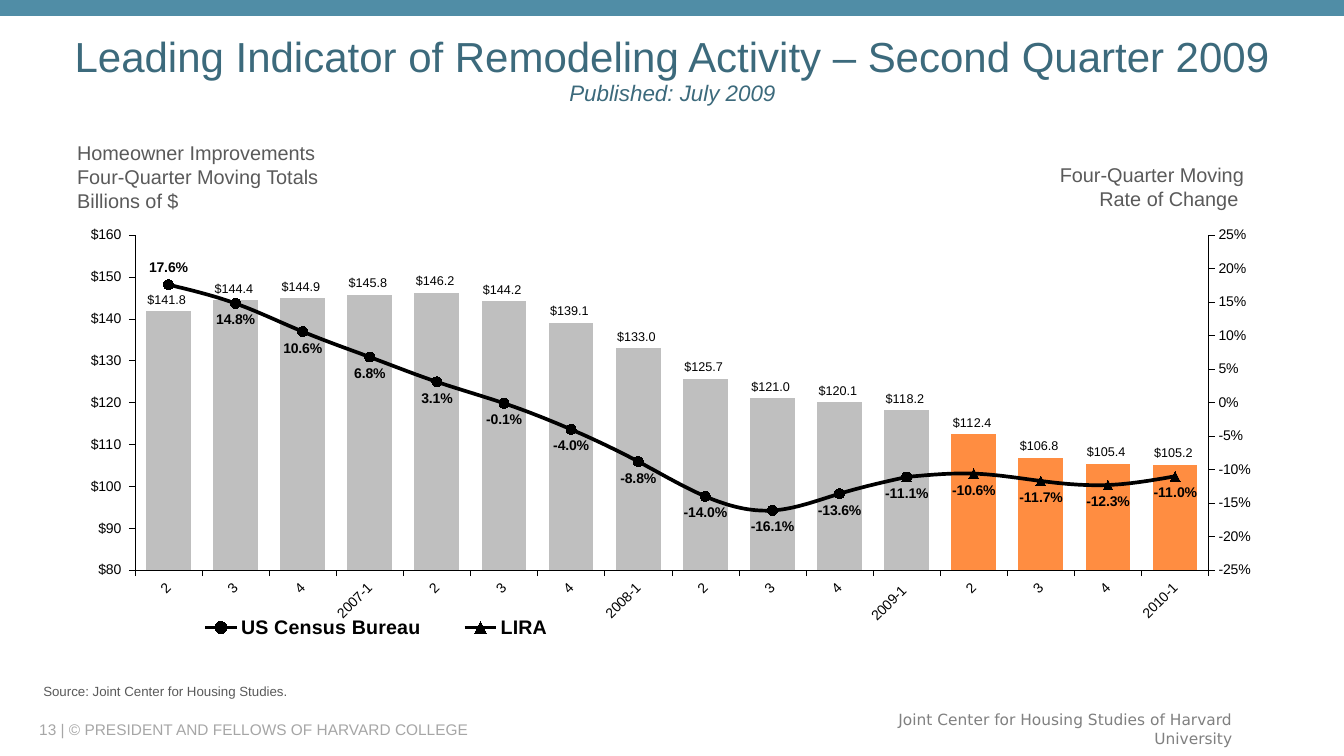
import copy

import lxml.etree
import pptx
import pptx.chart.axis
import pptx.chart.data
import pptx.dml.color
import pptx.enum.chart
import pptx.enum.shapes
import pptx.enum.text
import pptx.oxml
import pptx.oxml.ns
import pptx.util

WIDTH, HEIGHT = 13.33, 7.5
BLACK, TEAL, BAND, SLATE = "000000", "3C6A7C", "508DA6", "5A5A5A"
ACTUAL, PROJECTED = "BFBFBF", "FF8D41"

TITLE = "Leading Indicator of Remodeling Activity – Second Quarter 2009\vPublished: July 2009"
LEFT_HEADING = ["Homeowner Improvements", "Four-Quarter Moving Totals", "Billions of $"]
RIGHT_HEADING = ["Four-Quarter Moving", "Rate of Change "]
SOURCE = "Source: Joint Center for Housing Studies."
COPYRIGHT = "13 | © PRESIDENT AND FELLOWS OF HARVARD COLLEGE"
CENTER = "Joint Center for Housing Studies of Harvard University"

QUARTERS = ["2", "3", "4", "2007-1", "2", "3", "4", "2008-1",
            "2", "3", "4", "2009-1 ", "2", "3", "4", "2010-1"]
SPENDING = [141.8, 144.4, 144.9, 145.8, 146.2, 144.2, 139.1, 133.0,
            125.7, 121.0, 120.1, 118.2, 112.4, 106.8, 105.4, 105.2]
CENSUS = [0.176, 0.148, 0.106, 0.068, 0.031, -0.001, -0.04, -0.088,
          -0.14, -0.161, -0.136, -0.111]
LIRA = [-0.111, -0.106, -0.117, -0.123, -0.11]
FIRST_LIRA = len(QUARTERS) - len(LIRA)
DOLLARS, DOLLAR_LABELS = r"\$#,##0_);[Red]\(\$#,##0\)", r"\$#,##0.0_);[Red]\(\$#,##0.0\)"
PERCENT, PERCENT_LABELS = "0%", "0.0%"

PLOT_SHARES = {"x": 0.074, "y": 0.039, "w": 0.85, "h": 0.782}
LEGEND_SHARES = {"x": 0.1, "y": 0.92, "w": 0.33, "h": 0.07}


def color(value):
    return pptx.dml.color.RGBColor.from_string(value)


def place(left, top, width, height):
    """Turn percentages of the slide into lengths."""
    return [pptx.util.Inches(share * side / 100) for share, side in
            zip((left, top, width, height), (WIDTH, HEIGHT, WIDTH, HEIGHT))]


def style(font, size, tint=BLACK, bold=False, face="Arial"):
    font.size, font.name, font.bold = pptx.util.Pt(size), face, bold
    font.color.rgb = color(tint)


def write(slide, box, lines, size, tint, face="Arial", align="LEFT", anchor="TOP", spacing=None):
    frame = slide.shapes.add_textbox(*place(*box)).text_frame
    frame.word_wrap = True
    frame.vertical_anchor = pptx.enum.text.MSO_ANCHOR[anchor]
    for index, line in enumerate(lines):
        paragraph = frame.add_paragraph() if index else frame.paragraphs[0]
        paragraph.text = line
        paragraph.alignment = pptx.enum.text.PP_ALIGN[align]
        paragraph.line_spacing = spacing
        for run in paragraph.runs:
            style(run.font, size, tint, face=face)
    return frame


def element(tag, **attributes):
    made = pptx.oxml.parse_xml(f"<c:{tag} {pptx.oxml.ns.nsdecls('c')}/>")
    for key, value in attributes.items():
        made.set(key, value)
    return made


def layout(shares, inner=False):
    outer, manual = element("layout"), element("manualLayout")
    outer.append(manual)
    if inner:
        manual.append(element("layoutTarget", val="inner"))
    for side in "xy":
        manual.append(element(side + "Mode", val="edge"))
    for side, share in shares.items():
        manual.append(element(side, val=str(share)))
    return outer


def set_layout(parent, position, new_layout):
    for old in parent.xpath("c:layout"):
        parent.remove(old)
    parent.insert(position, new_layout)


def scale(axis, low, high, step, number_format):
    axis.minimum_scale, axis.maximum_scale, axis.major_unit = low, high, step
    axis.tick_labels.number_format = number_format
    axis.tick_labels.number_format_is_linked = False


def dress_axis(axis):
    axis.has_major_gridlines = False
    axis.major_tick_mark = pptx.enum.chart.XL_TICK_MARK.OUTSIDE
    axis.minor_tick_mark = pptx.enum.chart.XL_TICK_MARK.NONE
    axis.format.line.color.rgb = color(BLACK)
    axis.format.line.width = pptx.util.Pt(0.33)
    style(axis.tick_labels.font, 10)


def label(series, position, number_format, size, bold):
    labels = series.data_labels
    labels.show_value = True
    labels.position = pptx.enum.chart.XL_LABEL_POSITION[position]
    labels.number_format = number_format
    labels.number_format_is_linked = False
    style(labels.font, size, bold=bold)


def move_rates_to_right_axis(chart):
    """Turn the two rate series into lines on a percentage axis."""
    bars = chart.plots[0]._element
    area = bars.getparent()
    lines = element("lineChart")
    lines.extend([element("grouping", val="standard"), element("varyColors", val="0")])
    for rate in bars.xpath("c:ser")[1:]:
        for inverted in rate.xpath("c:invertIfNegative"):
            rate.remove(inverted)
        lines.append(rate)
    lines.append(element("marker", val="1"))
    bars.addnext(lines)
    quarters, rates = [copy.deepcopy(axis._element)
                       for axis in (chart.category_axis, chart.value_axis)]
    for axis, own, other in ((quarters, "5001", "5002"), (rates, "5002", "5001")):
        axis.xpath("c:axId")[0].set("val", own)
        axis.xpath("c:crossAx")[0].set("val", other)
        lines.append(element("axId", val=own))
    rates.xpath("c:axPos")[0].set("val", "r")
    rates.xpath("c:crosses")[0].set("val", "max")
    last_axis = area.xpath("c:catAx | c:valAx")[-1]
    last_axis.addnext(rates)
    rates.addnext(quarters)
    pptx.chart.axis.CategoryAxis(quarters).visible = False
    scale(pptx.chart.axis.ValueAxis(rates), -0.25, 0.25, 0.05, PERCENT)
    set_layout(area, 0, layout(PLOT_SHARES, inner=True))


def add_legend(chart):
    chart.has_legend = True
    legend = chart.legend
    legend.position = pptx.enum.chart.XL_LEGEND_POSITION.RIGHT
    legend.include_in_layout = False
    style(legend.font, 14, bold=True)
    entry = element("legendEntry")
    entry.extend([element("idx", val="0"), element("delete", val="1")])
    legend._element.insert(1, entry)
    set_layout(legend._element, 2, layout(LEGEND_SHARES))


def add_remodeling_chart(slide):
    data = pptx.chart.data.CategoryChartData()
    data.categories = QUARTERS
    data.add_series("Series 1", SPENDING, DOLLAR_LABELS)
    data.add_series("US Census Bureau", CENSUS + [None] * (len(QUARTERS) - len(CENSUS)),
                    PERCENT_LABELS)
    data.add_series("LIRA", [None] * FIRST_LIRA + LIRA, PERCENT_LABELS)
    chart = slide.shapes.add_chart(pptx.enum.chart.XL_CHART_TYPE.COLUMN_CLUSTERED,
                                   *place(3.08, 28.9, 94, 56.67), data).chart
    chart.has_title = False
    style(chart.font, 18.8, bold=True)
    for axis in (chart.category_axis, chart.value_axis):
        dress_axis(axis)
    scale(chart.value_axis, 80, 160, 10, DOLLARS)
    move_rates_to_right_axis(chart)
    chart.category_axis._element.xpath("c:txPr/a:bodyPr")[0].set("rot", "-2700000")

    bars, lines = chart.plots
    bars.gap_width, bars.vary_by_categories = 50, False
    spending = bars.series[0]
    spending.format.fill.solid()
    spending.format.fill.fore_color.rgb = color(ACTUAL)
    for quarter in range(len(CENSUS), len(QUARTERS)):
        fill = spending.points[quarter].format.fill
        fill.solid()
        fill.fore_color.rgb = color(PROJECTED)
    label(spending, "OUTSIDE_END", DOLLAR_LABELS, 9, False)

    for rate, marker in zip(lines.series, ("CIRCLE", "TRIANGLE")):
        rate.smooth = True
        rate.format.line.color.rgb = color(BLACK)
        rate.format.line.width = pptx.util.Pt(2.64)
        rate.marker.style = pptx.enum.chart.XL_MARKER_STYLE[marker]
        rate.marker.size = 7
        rate.marker.format.fill.solid()
        rate.marker.format.fill.fore_color.rgb = color(BLACK)
        rate.marker.format.line.color.rgb = color(BLACK)
        label(rate, "BELOW", PERCENT_LABELS, 10, True)
    census, lira = lines.series
    peak = census.points[0].data_label
    style(peak.font, 10, bold=True)
    peak.position = pptx.enum.chart.XL_LABEL_POSITION.ABOVE
    joint = lira.points[FIRST_LIRA].data_label._get_or_add_dLbl()
    joint.xpath("c:showVal")[0].set("val", "0")
    add_legend(chart)


def main():
    deck = pptx.Presentation()
    deck.slide_width, deck.slide_height = pptx.util.Inches(WIDTH), pptx.util.Inches(HEIGHT)
    slide = deck.slides.add_slide(deck.slide_layouts[6])
    band = slide.shapes.add_shape(pptx.enum.shapes.MSO_SHAPE.RECTANGLE, *place(0, 0, 100, 2.1))
    band.shadow.inherit = False
    band.fill.solid()
    band.fill.fore_color.rgb = color(BAND)
    band.line.fill.background()
    title = write(slide, (4.2, 4.45, 91.67, 10), [TITLE], 30, TEAL,
                  align="CENTER", anchor="MIDDLE", spacing=0.9)
    published = title.paragraphs[0].runs[1].font
    published.size, published.italic = pptx.util.Pt(16), True
    write(slide, (5, 17.93, 28.73, 10.93), LEFT_HEADING, 14.2, SLATE)
    write(slide, (62.82, 20.85, 30.46, 7.73), RIGHT_HEADING, 14.2, SLATE, align="RIGHT")
    add_remodeling_chart(slide)
    write(slide, (2.48, 89.73, 75.5, 3.47), [SOURCE], 9.5, SLATE)
    write(slide, (2.18, 95.07, 59.41, 2.67), [COPYRIGHT], 11, "A6A6A6", anchor="MIDDLE")
    write(slide, (63.17, 94.45, 29.26, 3.87), [CENTER], 11, "808080",
          face="DejaVu Sans", align="RIGHT", anchor="MIDDLE")
    deck.save("out.pptx")


if __name__ == "__main__":
    main()
